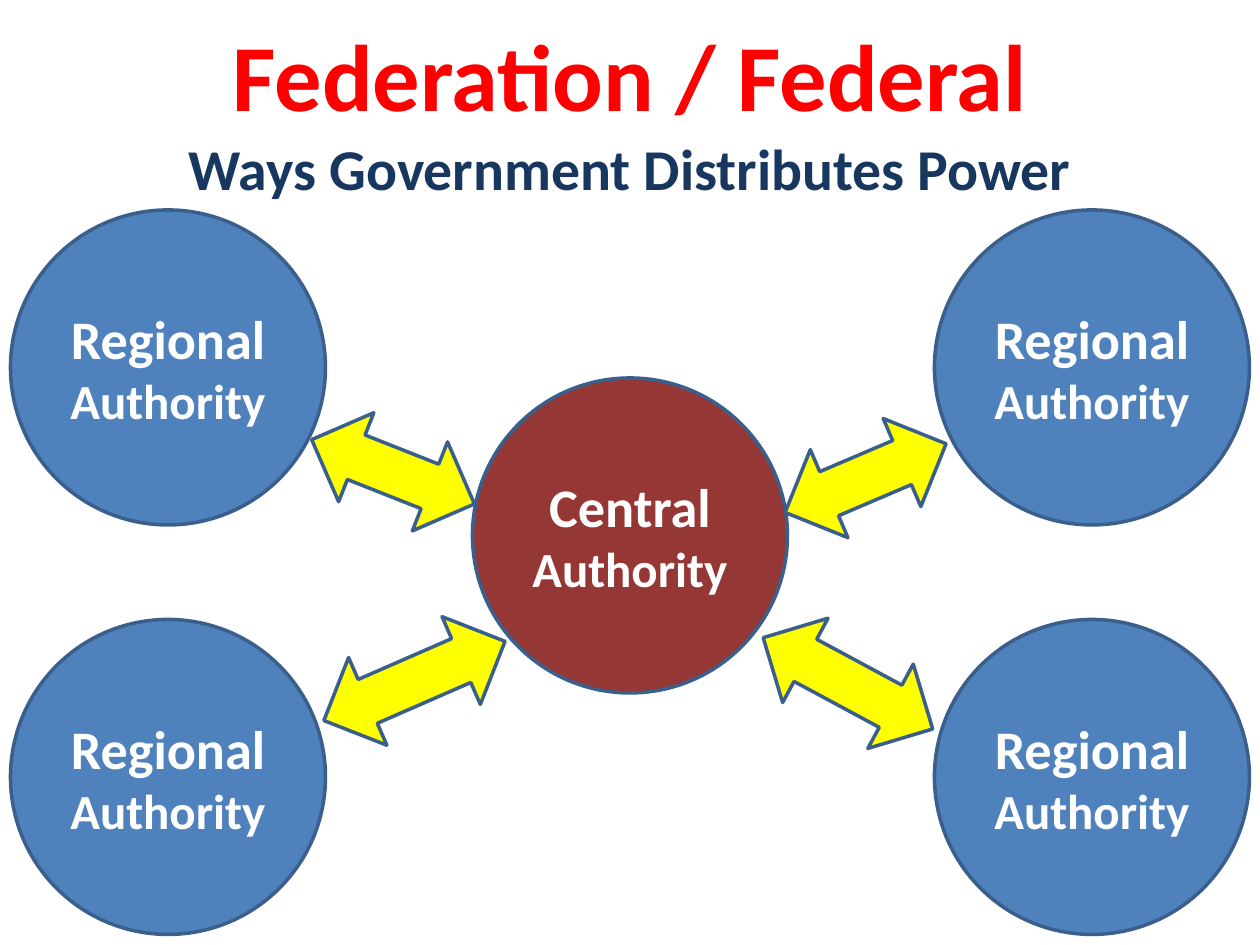
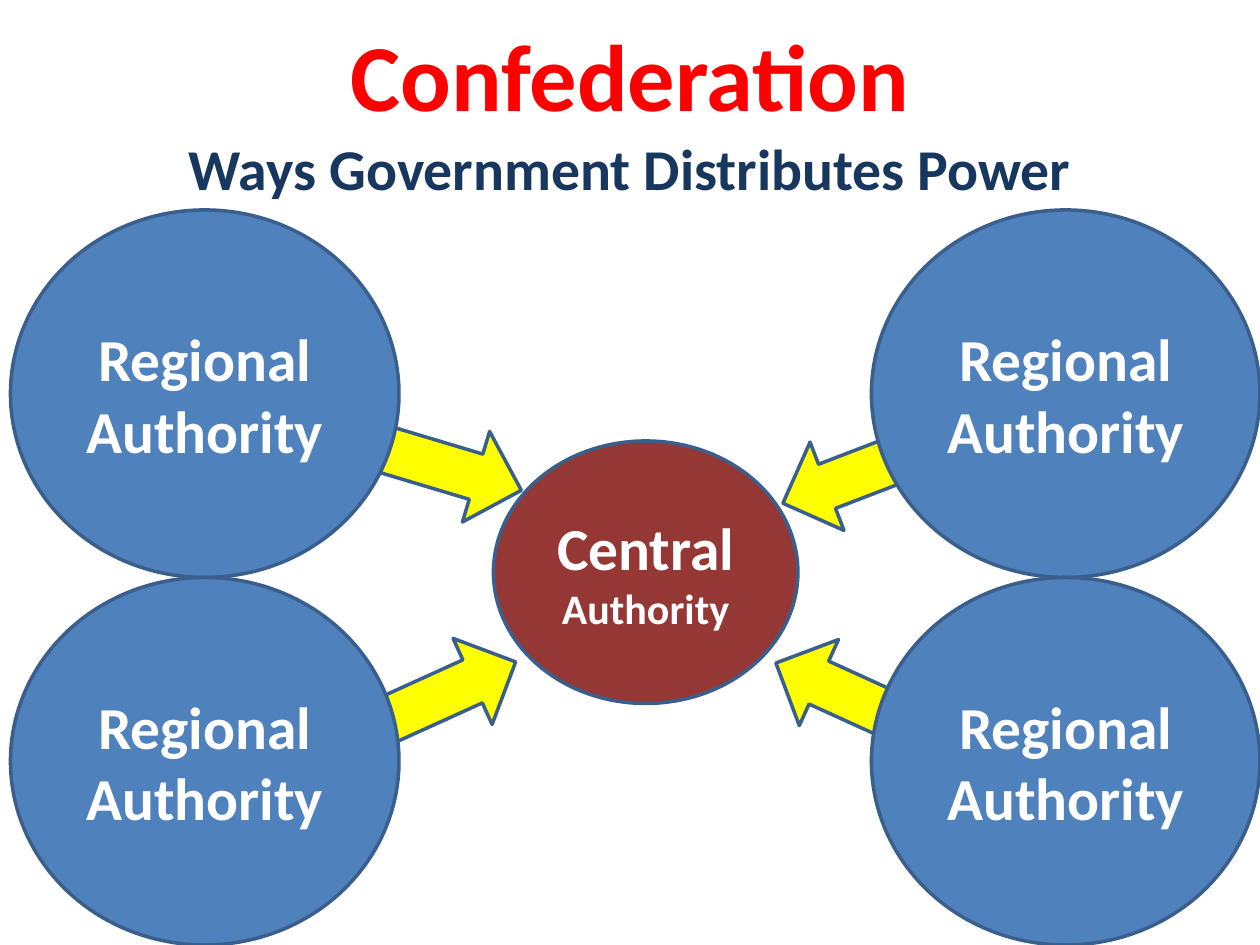
from dataclasses import dataclass

from pptx import Presentation
from pptx.dml.color import RGBColor
from pptx.enum.shapes import MSO_SHAPE
from pptx.enum.text import MSO_ANCHOR, MSO_AUTO_SIZE, PP_ALIGN
from pptx.util import Pt

# Shared style
FONT = "Calibri"
RED, NAVY, WHITE = "FF0000", "17375E", "FFFFFF"
BLUE, MAROON, YELLOW, EDGE = "4F81BD", "953735", "FFFF00", "3A5F8C"
WIDE, HIGH = 720, 540
SUB = "Ways Government Distributes Power"


@dataclass
class Box:
    left: float
    top: float
    width: float
    height: float


@dataclass
class Circle:
    box: Box
    fill: str
    name: str
    big: float
    small: float


@dataclass
class Arrow:
    box: Box
    turn: float
    kind: MSO_SHAPE


def paint(target, color: str) -> None:
    """Set the colour of a font, or of a solid fill."""
    if hasattr(target, "solid"):
        target.solid()
        target.fore_color.rgb = RGBColor.from_string(color)
    else:
        target.color.rgb = RGBColor.from_string(color)


def style(run, size: float, color: str) -> None:
    run.font.name = FONT
    run.font.size = Pt(size)
    run.font.bold = True
    paint(run.font, color)


def head(holder, text: str, box: Box, size: float, color: str) -> None:
    """Move a placeholder and fill it with one centred line."""
    holder.left, holder.top = Pt(box.left), Pt(box.top)
    holder.width, holder.height = Pt(box.width), Pt(box.height)
    frame = holder.text_frame
    frame.text = text
    frame.word_wrap = True
    frame.auto_size = MSO_AUTO_SIZE.NONE
    frame.vertical_anchor = MSO_ANCHOR.TOP
    line = frame.paragraphs[0]
    line.alignment = PP_ALIGN.CENTER
    line.space_before = Pt(0)
    style(line.runs[0], size, color)


def block(slide, kind: MSO_SHAPE, box: Box, fill: str):
    """Add a filled and outlined preset shape."""
    shape = slide.shapes.add_shape(
        kind, Pt(box.left), Pt(box.top), Pt(box.width), Pt(box.height))
    shape.shadow.inherit = False
    paint(shape.fill, fill)
    paint(shape.line.fill, EDGE)
    shape.line.width = Pt(2)
    return shape


def draw(slide, part: Circle | Arrow) -> None:
    if isinstance(part, Arrow):
        block(slide, part.kind, part.box, YELLOW).rotation = part.turn
        return
    frame = block(slide, MSO_SHAPE.OVAL, part.box, part.fill).text_frame
    frame.word_wrap = True
    frame.vertical_anchor = MSO_ANCHOR.MIDDLE
    line = frame.paragraphs[0]
    line.text = f"{part.name} "
    line.alignment = PP_ALIGN.CENTER
    line.add_run().text = "Authority"
    for run, size in zip(line.runs, (part.big, part.small)):
        style(run, size, WHITE)


def ring(lefts: tuple, tops: tuple, width: float, height: float,
         big: float, small: float) -> list[Circle]:
    """Four regional circles, one in each corner."""
    return [Circle(Box(x, y, width, height), BLUE, "Regional", big, small)
            for x in lefts for y in tops]


# Federation: power flows both ways
BOTH = MSO_SHAPE.UP_DOWN_ARROW
FED = [
    *ring((6, 534), (120, 354), 180, 180, 31, 28),
    Arrow(Box(197.3, 219.6, 54.7, 100), 291.6, BOTH),
    Circle(Box(270, 216, 180, 180), MAROON, "Central", 31, 28),
    Arrow(Box(209.5, 332.6, 54.7, 113), 246.4, BOTH),
    Arrow(Box(467.3, 223.2, 54.7, 100), 246.9, BOTH),
    Arrow(Box(457.2, 335.5, 54.7, 110), 118.3, BOTH),
]

# Confederation: power flows from the regions to the centre
INTO = MSO_SHAPE.RIGHT_ARROW
CON = [
    Arrow(Box(191.5, 237.6, 108.7, 54), 16.7, INTO),
    Arrow(Box(190.8, 373.7, 108.7, 54), 335.6, INTO),
    Arrow(Box(438.5, 374.4, 108.7, 54), 204.5, INTO),
    Arrow(Box(444.2, 243.4, 95.8, 54), 159, INTO),
    Circle(Box(282, 252, 174, 150), MAROON, "Central", 34, 24),
    *ring((498, 6), (120, 330), 222, 210, 34, 34),
]


def main() -> None:
    deck = Presentation()
    deck.slide_width, deck.slide_height = Pt(WIDE), Pt(HIGH)
    for title, parts in (("Federation / Federal", FED), ("Confederation", CON)):
        slide = deck.slides.add_slide(deck.slide_layouts[0])
        head(slide.shapes.title, title, Box(0, 6, WIDE, 62.6), 54, RED)
        head(slide.placeholders[1], SUB, Box(0, 72, WIDE, 90), 33, NAVY)
        for part in parts:
            draw(slide, part)
    deck.save("out.pptx")


if __name__ == "__main__":
    main()
